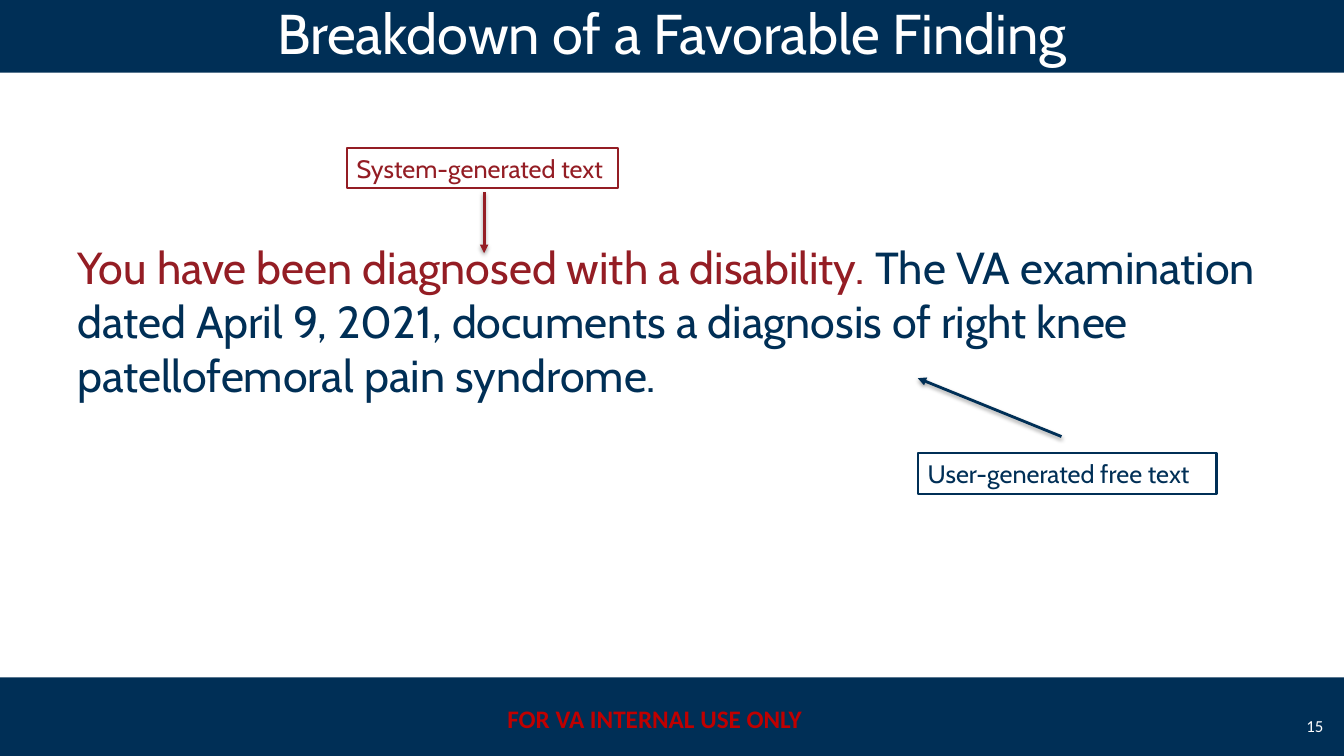
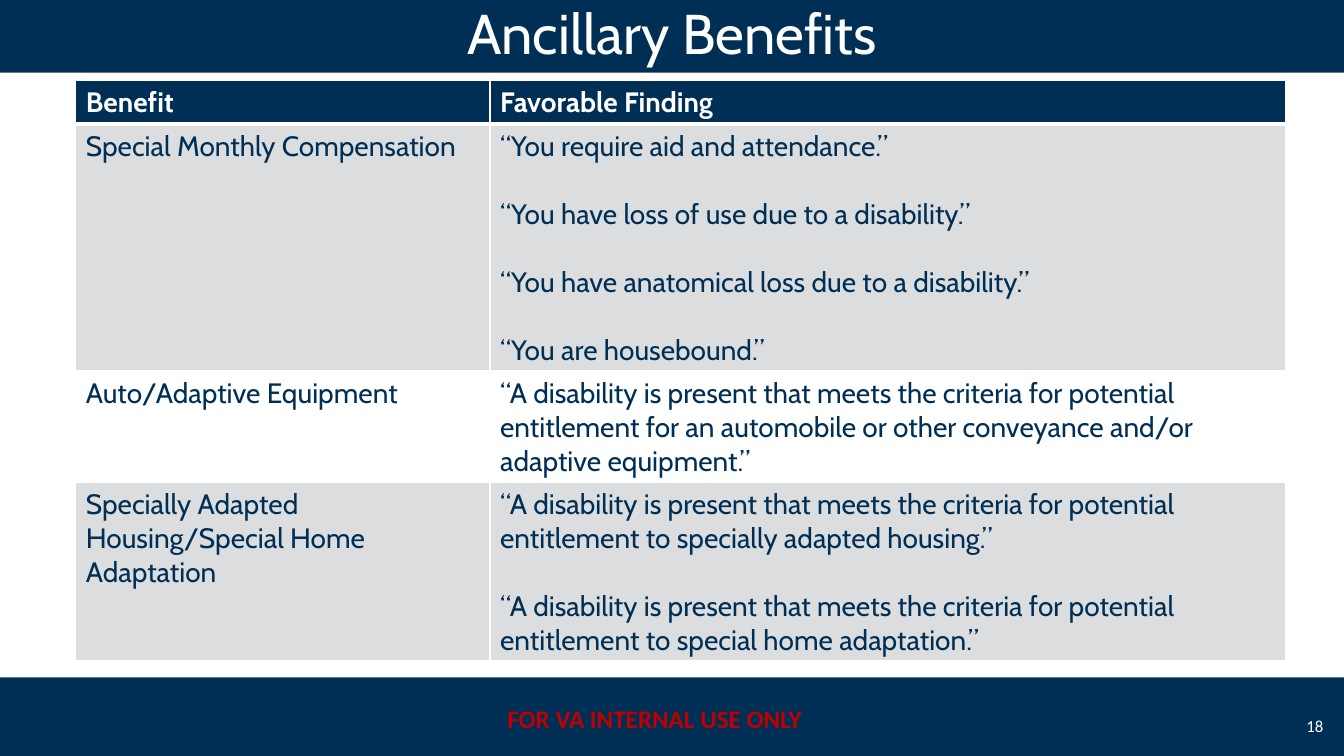
"""Build two training slides on favorable findings and ancillary benefits."""
import dataclasses
import typing

import pptx
import pptx.dml.color
import pptx.enum.shapes
import pptx.enum.text
import pptx.oxml
import pptx.oxml.ns
import pptx.util

Cm = pptx.util.Cm
Pt = pptx.util.Pt
ALIGN = pptx.enum.text.PP_ALIGN
ANCHOR = pptx.enum.text.MSO_ANCHOR

NAVY = "002F56"
RED = "941D24"
WARNING_RED = "C00000"
GRAY = "DCDDDE"
WHITE = "FFFFFF"

SLIDE_WIDTH, SLIDE_HEIGHT = 33.87, 19.05
BAND_HEIGHT = 2.03
TITLE_TOP, FOOTER_TOP = -0.2, 17.07

TITLE_FORMAT = {"name": "Cabin", "size": Pt(40), "color": WHITE}
BODY_FORMAT = {"name": "Cabin", "size": Pt(32), "color": NAVY}
LABEL_FORMAT = {"name": "Cabin", "size": Pt(18)}
CELL_FORMAT = {"name": "Cabin", "size": Pt(20), "bold": False, "color": NAVY}
HEADER_FORMAT = CELL_FORMAT | {"bold": True, "color": WHITE}
WARNING_FORMAT = {"name": "Calibri", "size": Pt(18), "bold": True, "color": WARNING_RED}
NUMBER_FORMAT = {"name": "Calibri", "size": Pt(12), "color": WHITE}


@dataclasses.dataclass(frozen=True)
class Box:
    left: float
    top: float
    width: float
    height: float

    def lengths(self) -> tuple:
        return Cm(self.left), Cm(self.top), Cm(self.width), Cm(self.height)


@dataclasses.dataclass(frozen=True)
class Callout:
    text: str
    color: str
    box: Box
    arrow_start: tuple[float, float]
    arrow_end: tuple[float, float]


@dataclasses.dataclass(frozen=True)
class BenefitRow:
    benefit: str
    findings: tuple[str, ...]
    height: float
    fill: str
    text_format: dict = dataclasses.field(default_factory=lambda: CELL_FORMAT)


CALLOUTS = (
    Callout("System-generated text", RED, Box(8.74, 3.73, 6.83, 1.02), (12.2, 4.85), (12.2, 6.38)),
    Callout("User-generated free text", NAVY, Box(23.13, 11.42, 7.53, 1.02), (26.75, 11), (23.13, 9.53)),
)

BENEFITS = (
    BenefitRow("Benefit", ("Favorable Finding",), 1.05, NAVY, HEADER_FORMAT),
    BenefitRow(
        "Special Monthly Compensation",
        (
            "“You require aid and attendance.”",
            "“You have loss of use due to a disability.”",
            "“You have anatomical loss due to a disability.”",
            "“You are housebound.”",
        ),
        6.2,
        GRAY,
    ),
    BenefitRow(
        "Auto/Adaptive Equipment",
        (
            "“A disability is present that meets the criteria for potential entitlement "
            "for an automobile or other conveyance and/or adaptive equipment.”",
        ),
        2.8,
        WHITE,
    ),
    BenefitRow(
        "Specially Adapted Housing/Special Home Adaptation",
        (
            "“A disability is present that meets the criteria for potential entitlement "
            "to specially adapted housing.”",
            "“A disability is present that meets the criteria for potential entitlement "
            "to special home adaptation.”",
        ),
        4.5,
        GRAY,
    ),
)


def rgb(color: str) -> pptx.dml.color.RGBColor:
    return pptx.dml.color.RGBColor.from_string(color)


def add_run(paragraph: typing.Any, text: str, text_format: dict) -> None:
    run = paragraph.add_run()
    run.text = text
    for attribute, value in text_format.items():
        if attribute == "color":
            run.font.color.rgb = rgb(value)
        else:
            setattr(run.font, attribute, value)


def write_text(
    shape: typing.Any,
    runs: typing.Sequence[tuple[str, dict]],
    align: typing.Any = ALIGN.LEFT,
    anchor: typing.Any = ANCHOR.TOP,
) -> None:
    frame = shape.text_frame
    frame.word_wrap = True
    frame.vertical_anchor = anchor
    paragraph = frame.paragraphs[0]
    paragraph.alignment = align
    for text, text_format in runs:
        add_run(paragraph, text, text_format)


def add_rectangle(
    slide: typing.Any, box: Box, fill: str | None = None, outline: str | None = None
) -> typing.Any:
    shape = slide.shapes.add_shape(pptx.enum.shapes.MSO_SHAPE.RECTANGLE, *box.lengths())
    shape.shadow.inherit = False
    if fill:
        shape.fill.solid()
        shape.fill.fore_color.rgb = rgb(fill)
    else:
        shape.fill.background()
    if outline:
        shape.line.color.rgb = rgb(outline)
        shape.line.width = Pt(1.5)
    else:
        shape.line.fill.background()
    return shape


def add_arrow(
    slide: typing.Any, start: tuple[float, float], end: tuple[float, float], color: str
) -> None:
    connector = slide.shapes.add_connector(
        pptx.enum.shapes.MSO_CONNECTOR.STRAIGHT, *(Cm(value) for value in start + end)
    )
    connector.line.color.rgb = rgb(color)
    connector.line.width = Pt(2)
    namespace = pptx.oxml.ns.nsdecls("a")
    properties = connector._element.spPr
    properties.find(pptx.oxml.ns.qn("a:ln")).append(
        pptx.oxml.parse_xml(f'<a:tailEnd {namespace} type="triangle"/>')
    )
    properties.append(
        pptx.oxml.parse_xml(
            f'<a:effectLst {namespace}><a:outerShdw blurRad="{Pt(3.1)}" dist="{Pt(1.6)}" '
            'dir="5400000" rotWithShape="0"><a:srgbClr val="000000"><a:alpha val="38000"/>'
            "</a:srgbClr></a:outerShdw></a:effectLst>"
        )
    )


def add_callout(slide: typing.Any, callout: Callout) -> None:
    shape = add_rectangle(slide, callout.box, outline=callout.color)
    write_text(shape, [(callout.text, LABEL_FORMAT | {"color": callout.color})])
    add_arrow(slide, callout.arrow_start, callout.arrow_end, callout.color)


def add_base_slide(presentation: typing.Any, title: str, number: int) -> typing.Any:
    slide = presentation.slides.add_slide(presentation.slide_layouts[6])
    add_rectangle(slide, Box(0, FOOTER_TOP, SLIDE_WIDTH, BAND_HEIGHT), NAVY)
    title_band = add_rectangle(slide, Box(0, TITLE_TOP, SLIDE_WIDTH, BAND_HEIGHT), NAVY)
    write_text(title_band, [(title, TITLE_FORMAT)], ALIGN.CENTER, ANCHOR.MIDDLE)
    warning = add_rectangle(slide, Box(11, 17.6, 11, 1.02), NAVY)
    write_text(warning, [("FOR VA INTERNAL USE ONLY", WARNING_FORMAT)], ALIGN.CENTER)
    number_box = slide.shapes.add_textbox(*Box(25.7, 17.78, 7.9, 1.02).lengths())
    write_text(number_box, [(str(number), NUMBER_FORMAT)], ALIGN.RIGHT, ANCHOR.MIDDLE)
    return slide


def set_borders(cell: typing.Any, top: float, bottom: float) -> None:
    properties = cell._tc.get_or_add_tcPr()
    for side, width in {"L": 1, "R": 1, "T": top, "B": bottom}.items():
        properties.append(
            pptx.oxml.parse_xml(
                f'<a:ln{side} {pptx.oxml.ns.nsdecls("a")} w="{Pt(width)}"><a:solidFill>'
                f'<a:srgbClr val="{WHITE}"/></a:solidFill></a:ln{side}>'
            )
        )


def fill_cell(cell: typing.Any, texts: tuple[str, ...], row: BenefitRow) -> None:
    cell.fill.solid()
    cell.fill.fore_color.rgb = rgb(row.fill)
    frame = cell.text_frame
    for index, text in enumerate(texts):
        paragraph = frame.add_paragraph() if index else frame.paragraphs[0]
        if index:
            paragraph.space_before = Pt(24.3)
        add_run(paragraph, text, row.text_format)


def add_benefit_table(slide: typing.Any) -> None:
    column_widths = (10.44, 20.04)
    box = Box(1.91, 2.03, sum(column_widths), sum(row.height for row in BENEFITS))
    table = slide.shapes.add_table(len(BENEFITS), len(column_widths), *box.lengths()).table
    for column, width in zip(table.columns, column_widths):
        column.width = Cm(width)
    for index, row in enumerate(BENEFITS):
        table.rows[index].height = Cm(row.height)
        for column_index, texts in enumerate(((row.benefit,), row.findings)):
            cell = table.cell(index, column_index)
            set_borders(cell, top=3 if index == 1 else 1, bottom=3 if index == 0 else 1)
            fill_cell(cell, texts, row)


def build_finding_slide(presentation: typing.Any) -> None:
    slide = add_base_slide(presentation, "Breakdown of a Favorable Finding", 15)
    body = slide.shapes.add_textbox(*Box(1.7, 5.92, 30.48, 9.4).lengths())
    write_text(
        body,
        [
            ("You have been diagnosed with a disability. ", BODY_FORMAT | {"color": RED}),
            (
                "The VA examination dated April 9, 2021, documents a diagnosis of "
                "right knee patellofemoral pain syndrome.",
                BODY_FORMAT,
            ),
        ],
    )
    for callout in CALLOUTS:
        add_callout(slide, callout)


def build_benefits_slide(presentation: typing.Any) -> None:
    slide = add_base_slide(presentation, "Ancillary Benefits", 18)
    add_benefit_table(slide)


def main() -> None:
    presentation = pptx.Presentation()
    presentation.slide_width = Cm(SLIDE_WIDTH)
    presentation.slide_height = Cm(SLIDE_HEIGHT)
    build_finding_slide(presentation)
    build_benefits_slide(presentation)
    presentation.save("out.pptx")


if __name__ == "__main__":
    main()
